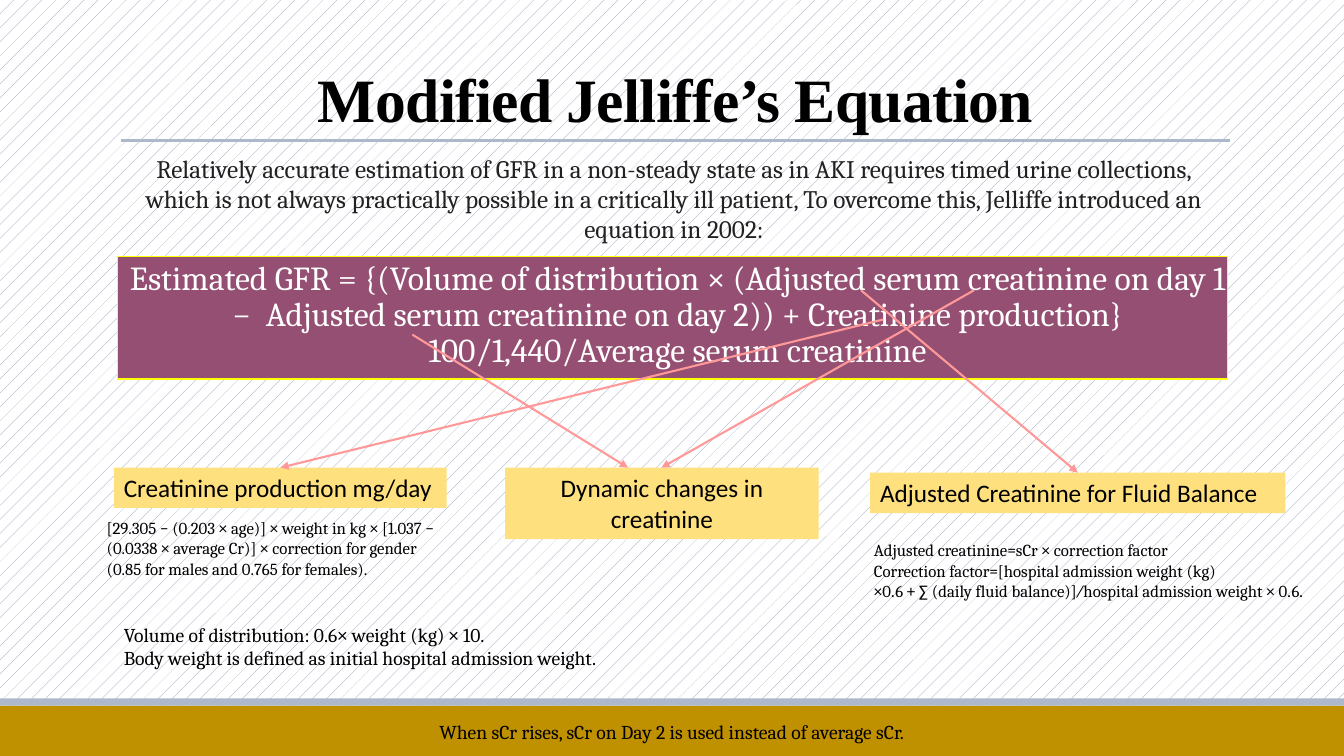
from dataclasses import dataclass

import lxml.etree
import pptx
import pptx.dml.color
import pptx.enum.dml
import pptx.enum.shapes
import pptx.enum.text
import pptx.oxml.ns
import pptx.util

Inches = pptx.util.Inches
Pt = pptx.util.Pt
Align = pptx.enum.text.PP_ALIGN
Anchor = pptx.enum.text.MSO_ANCHOR
AutoSize = pptx.enum.text.MSO_AUTO_SIZE
qn = pptx.oxml.ns.qn

GOLD, STEEL, PLUM, YELLOW = "BF9000", "ADB9CA", "954F72", "FFE07F"
MATH_FONT = "Calibri"


@dataclass
class TextBox:
    left: float
    top: float
    width: float
    height: float
    lines: list[str]
    size: int = 18
    font: str = "Cambria"
    color: str = "000000"
    align: Align = Align.LEFT
    fill: str | None = None


@dataclass
class Line:
    start: tuple[float, float]
    end: tuple[float, float]
    color: str = "FF9999"
    width: float = 1.5
    arrow: bool = True


TEXT_BOXES = [
    TextBox(1.17, 1.47, 11.03, 1.01, [
        "Relatively accurate estimation of GFR in a non-steady state as in AKI "
        "requires timed urine collections, which is not always practically possible "
        "in a critically ill patient, To overcome this, Jelliffe introduced an "
        "equation in 2002:"], color="212121", align=Align.CENTER),
    TextBox(1.13, 4.64, 3.3, 0.4, ["Creatinine production mg/day"],
            font="Calibri", fill=YELLOW),
    TextBox(5.01, 4.64, 3.11, 0.71, ["Dynamic changes in creatinine"],
            font="Calibri", align=Align.CENTER, fill=YELLOW),
    TextBox(8.63, 4.69, 4.12, 0.4, ["Adjusted Creatinine for Fluid Balance"],
            font="Calibri", fill=YELLOW),
    TextBox(1.13, 6.13, 6.98, 0.57, [
        "Volume of distribution: 0.6|× |weight (kg) |× |10.",
        "Body weight is defined as initial hospital admission weight."], size=14),
    TextBox(3.33, 7.09, 6.67, 0.34,
            ["When sCr rises, sCr on Day 2 is used instead of average sCr."],
            size=14, align=Align.CENTER),
    TextBox(0.96, 5.09, 3.54, 0.71, [
        "[29.305 |− |(0.203 |× |age)] |× |weight in kg |× |[1.037 |− |(0.0338 |× |"
        "average Cr)] |× |correction for gender (0.85 for males and 0.765 for females)."],
        size=12),
    TextBox(8.57, 5.31, 4.47, 0.71, [
        "Adjusted creatinine|=|sCr |× |correction factor",
        "Correction factor|=|[hospital admission weight (kg)",
        "|×|0|.|6 |+ ∑ |(daily fluid balance)]|/|hospital admission weight |× |0|.|6|.|"],
        size=12),
]

LINES = [
    Line((1.2, 1.39), (12.2, 1.39), STEEL, 2.25, arrow=False),
    Line((8.76, 3.17), (2.78, 4.64)),
    Line((8.54, 2.88), (10.69, 4.69)),
    Line((9.66, 2.88), (6.56, 4.64)),
    Line((4.09, 3.32), (6.23, 4.64)),
]


def rgb(color: str) -> pptx.dml.color.RGBColor:
    return pptx.dml.color.RGBColor.from_string(color)


def apply_format(target, values: dict) -> None:
    for name, value in values.items():
        setattr(target, name, value)


def place(shape, left: float, top: float, width: float, height: float) -> None:
    apply_format(shape, {"left": Inches(left), "top": Inches(top),
                         "width": Inches(width), "height": Inches(height)})


def paint(shape, color: str) -> None:
    shape.fill.solid()
    shape.fill.fore_color.rgb = rgb(color)


def add_span(para, text: str, size: float, font: str, color: str, **extra):
    span = para.add_run()
    span.text = text
    apply_format(span.font, {"size": Pt(size), "name": font, **extra})
    span.font.color.rgb = rgb(color)
    return span


def add_marked_text(para, text: str, item: TextBox) -> None:
    """Write text whose odd segments between bars are math symbols."""
    for index, segment in enumerate(text.split("|")):
        if segment:
            is_math = index % 2 == 1
            add_span(para, segment, item.size, MATH_FONT if is_math else item.font,
                     item.color, italic=is_math and segment in "./")


def add_text_box(slide, item: TextBox) -> None:
    box = slide.shapes.add_textbox(Inches(item.left), Inches(item.top),
                                   Inches(item.width), Inches(item.height))
    if item.fill:
        paint(box, item.fill)
    frame = box.text_frame
    apply_format(frame, {"word_wrap": True, "auto_size": AutoSize.SHAPE_TO_FIT_TEXT})
    for index, text in enumerate(item.lines):
        para = frame.add_paragraph() if index else frame.paragraphs[0]
        para.alignment = item.align
        add_marked_text(para, text, item)


def add_line(slide, item: Line) -> None:
    connector = slide.shapes.add_connector(
        pptx.enum.shapes.MSO_CONNECTOR.STRAIGHT,
        *(Inches(value) for value in item.start + item.end))
    connector.line.color.rgb = rgb(item.color)
    connector.line.width = Pt(item.width)
    if item.arrow:
        lxml.etree.SubElement(connector.line._get_or_add_ln(), qn("a:tailEnd"),
                              type="triangle")
    lxml.etree.SubElement(connector._element.spPr, qn("a:effectLst"))


def add_bar(slide, top: float, height: float, color: str) -> None:
    bar = slide.shapes.add_shape(pptx.enum.shapes.MSO_SHAPE.RECTANGLE, 0, Inches(top),
                                 Inches(13.33), Inches(height))
    bar.shadow.inherit = False
    paint(bar, color)
    bar.line.fill.background()


def fill_title(title) -> None:
    place(title, 1.2, 0.31, 11, 1.08)
    apply_format(title.text_frame, {"vertical_anchor": Anchor.BOTTOM, "word_wrap": True,
                                    "auto_size": AutoSize.NONE})
    para = title.text_frame.paragraphs[0]
    apply_format(para, {"alignment": Align.CENTER, "line_spacing": 0.85})
    span = add_span(para, "Modified Jelliffe’s Equation", 44, "Times New Roman",
                    "000000", bold=True)
    span.font._element.set("spc", "-50")


def fill_equation(body) -> None:
    place(body, 1.17, 2.54, 11, 1.22)
    paint(body, PLUM)
    body.line.color.rgb = rgb("FFFF00")
    body.line.width = Pt(0.75)
    apply_format(body.text_frame, {
        "margin_left": 0, "margin_right": 0, "margin_top": Inches(0.05),
        "margin_bottom": Inches(0.05), "vertical_anchor": Anchor.TOP,
        "word_wrap": True, "auto_size": AutoSize.NONE})
    para = body.text_frame.paragraphs[0]
    properties = para._p.get_or_add_pPr()
    properties.set("marL", str(Inches(0.1)))
    properties.set("indent", str(-Inches(0.1)))
    bullet_color = lxml.etree.SubElement(properties, qn("a:buClr"))
    lxml.etree.SubElement(bullet_color, qn("a:srgbClr"), val=PLUM)
    lxml.etree.SubElement(properties, qn("a:buChar"), char=" ")
    apply_format(para, {"alignment": Align.CENTER, "line_spacing": 0.9,
                        "space_before": Pt(0), "space_after": Pt(2)})
    add_span(para, "Estimated GFR = {(Volume of distribution × (Adjusted serum creatinine "
             "on day 1 −  Adjusted serum creatinine on day 2)) + Creatinine production} "
             "100/1,440/Average serum creatinine", 24, "Cambria", "FFFFFF")


def main() -> None:
    deck = pptx.Presentation()
    deck.slide_width, deck.slide_height = Inches(13.33), Inches(7.5)
    page = deck.slides.add_slide(deck.slide_layouts[1])
    background = page.background.fill
    background.patterned()
    background.pattern = pptx.enum.dml.MSO_PATTERN.PERCENT_5
    background.fore_color.rgb = rgb("8496B0")
    background.back_color.rgb = rgb("FFFFFF")
    add_bar(page, 7, 0.5, GOLD)
    add_bar(page, 6.93, 0.07, STEEL)
    fill_title(page.shapes.title)
    fill_equation(page.placeholders[1])
    for item in TEXT_BOXES:
        add_text_box(page, item)
    for item in LINES:
        add_line(page, item)
    deck.save("out.pptx")


if __name__ == "__main__":
    main()
